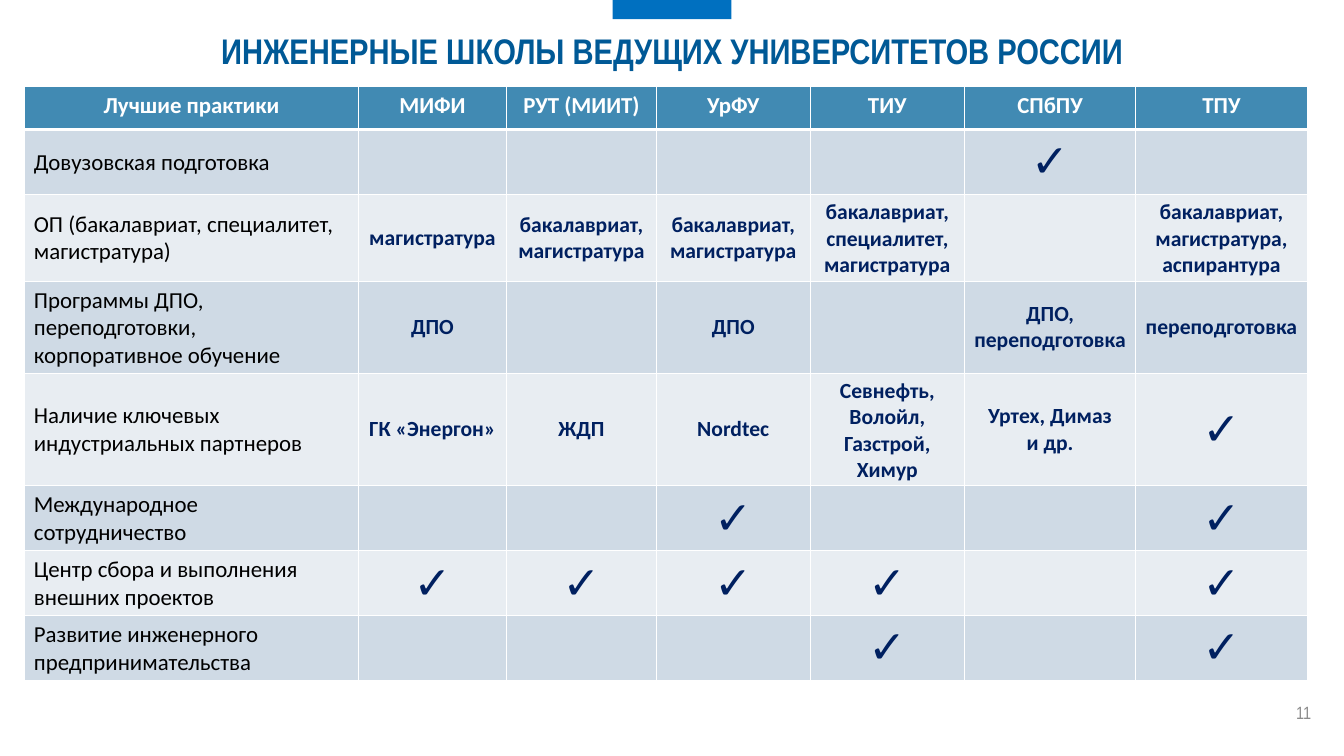
from lxml.etree import SubElement
from pptx import Presentation
from pptx.dml.color import RGBColor
from pptx.enum.shapes import MSO_SHAPE
from pptx.enum.text import MSO_ANCHOR, PP_ALIGN
from pptx.oxml.ns import qn
from pptx.util import Inches, Pt

CHECK = "✓"
UNIVERSITIES = ["МИФИ", "РУТ (МИИТ)", "УрФУ", "ТИУ", "СПбПУ", "ТПУ"]
MASTER = "бакалавриат, магистратура"

# Each practice, followed by one entry per university
PRACTICES = [
    ["Довузовская подготовка", "", "", "", "", CHECK, ""],
    ["ОП (бакалавриат, специалитет, магистратура)", "магистратура", MASTER, MASTER,
     "бакалавриат, специалитет, магистратура", "",
     "бакалавриат, магистратура, аспирантура"],
    ["Программы ДПО, переподготовки, корпоративное обучение", "ДПО", "", "ДПО", "",
     "ДПО, переподготовка", "переподготовка"],
    ["Наличие ключевых индустриальных партнеров", "ГК «Энергон»", "ЖДП", "Nordtec",
     "Севнефть, Волойл, Газстрой, Химур", "Уртех, Димаз\vи др.", CHECK],
    ["Международное сотрудничество", "", "", CHECK, "", "", CHECK],
    ["Центр сбора и выполнения внешних проектов", CHECK, CHECK, CHECK, CHECK, "", CHECK],
    ["Развитие инженерного предпринимательства", "", "", "", CHECK, "", CHECK],
]

# Table sizes in percent of the slide's width and height
COLUMN_WIDTHS = [24.83, 11.02, 11.16, 11.43, 11.5, 12.72, 12.79]
ROW_HEIGHTS = [5.68, 8.59, 11.49, 11.49, 14.87, 8.59, 8.59, 8.59]


def color(value):
    return RGBColor.from_string(value)


class SlideBuilder:
    """Holds the style and the slide; lengths are percent of the slide's size."""

    heading_font = "Arial Narrow"
    table_font = "Calibri"
    bands = ["CFDAE5", "E8EDF2"]
    header_fill = "418AB3"
    border = "FFFFFF"

    def __init__(self, presentation):
        self.width = presentation.slide_width
        self.height = presentation.slide_height
        self.slide = presentation.slides.add_slide(presentation.slide_layouts[5])

    def box(self, left, top, width, height):
        return (int(self.width * left / 100), int(self.height * top / 100),
                int(self.width * width / 100), int(self.height * height / 100))

    def set_text(self, text_frame, text, font, size, hex_color, bold=False,
                 align=PP_ALIGN.CENTER):
        text_frame.text = text
        text_frame.word_wrap = True
        for paragraph in text_frame.paragraphs:
            paragraph.alignment = align
            for run in paragraph.runs:
                run.font.name = font
                run.font.size = Pt(size)
                run.font.bold = bold
                run.font.color.rgb = color(hex_color)

    def title(self, text, *place):
        shape = self.slide.shapes.title
        shape.left, shape.top, shape.width, shape.height = self.box(*place)
        frame = shape.text_frame
        frame.margin_left = frame.margin_right = 0
        frame.margin_top = frame.margin_bottom = 0
        frame.vertical_anchor = MSO_ANCHOR.MIDDLE
        self.set_text(frame, text, self.heading_font, 28, "005996", bold=True)

    def page_number(self, text, *place):
        frame = self.slide.shapes.add_textbox(*self.box(*place)).text_frame
        frame.vertical_anchor = MSO_ANCHOR.MIDDLE
        self.set_text(frame, text, self.heading_font, 14, "8C8C8C", align=PP_ALIGN.RIGHT)

    def bar(self, fill, *place):
        shape = self.slide.shapes.add_shape(MSO_SHAPE.RECTANGLE, *self.box(*place))
        shape.shadow.inherit = False
        shape.fill.solid()
        shape.fill.fore_color.rgb = color(fill)
        shape.line.fill.background()

    def cell_style(self, cell, fill, top, bottom):
        properties = cell._tc.get_or_add_tcPr()
        for side, points in (("L", 1), ("R", 1), ("T", top), ("B", bottom)):
            line = SubElement(properties, qn(f"a:ln{side}"), w=str(Pt(points)))
            line_fill = SubElement(line, qn("a:solidFill"))
            SubElement(line_fill, qn("a:srgbClr"), val=self.border)
        cell.fill.solid()
        cell.fill.fore_color.rgb = color(fill)

    def table(self, rows, left, top):
        place = self.box(left, top, sum(COLUMN_WIDTHS), sum(ROW_HEIGHTS))
        table = self.slide.shapes.add_table(len(rows), len(rows[0]), *place).table
        for column, width in zip(table.columns, COLUMN_WIDTHS):
            column.width = int(self.width * width / 100)
        for row, height in zip(table.rows, ROW_HEIGHTS):
            row.height = int(self.height * height / 100)

        for r, texts in enumerate(rows):
            fill = self.bands[(r - 1) % 2] if r else self.header_fill
            for c, text in enumerate(texts):
                cell = table.cell(r, c)
                # A thick rule separates the header from the body
                self.cell_style(cell, fill, 3 if r == 1 else 1, 3 if r == 0 else 1)
                cell.vertical_anchor = MSO_ANCHOR.MIDDLE if r else MSO_ANCHOR.TOP
                frame, font = cell.text_frame, self.table_font
                if r == 0:
                    self.set_text(frame, text, font, 18, "FFFFFF", bold=True)
                elif c == 0:
                    self.set_text(frame, text, font, 18, "000000", align=PP_ALIGN.LEFT)
                elif text == CHECK:
                    self.set_text(frame, text, font, 36, "002060")
                elif text:
                    self.set_text(frame, text, font, 17, "002060", bold=True)


def main():
    presentation = Presentation()
    presentation.slide_width = Inches(14.7)
    presentation.slide_height = Inches(8.27)
    builder = SlideBuilder(presentation)

    # Heading and page number
    builder.title("ИНЖЕНЕРНЫЕ ШКОЛЫ ВЕДУЩИХ УНИВЕРСИТЕТОВ РОССИИ", 0, 3.63, 100, 6.17)
    builder.page_number("11", 93.47, 91.54, 4.76, 5.32)

    # Comparison of the universities
    builder.table([["Лучшие практики", *UNIVERSITIES], *PRACTICES], 1.84, 11.49)

    # Accent at the top edge
    builder.bar("0070C0", 45.58, 0, 8.84, 2.54)

    presentation.save("out.pptx")


if __name__ == "__main__":
    main()
